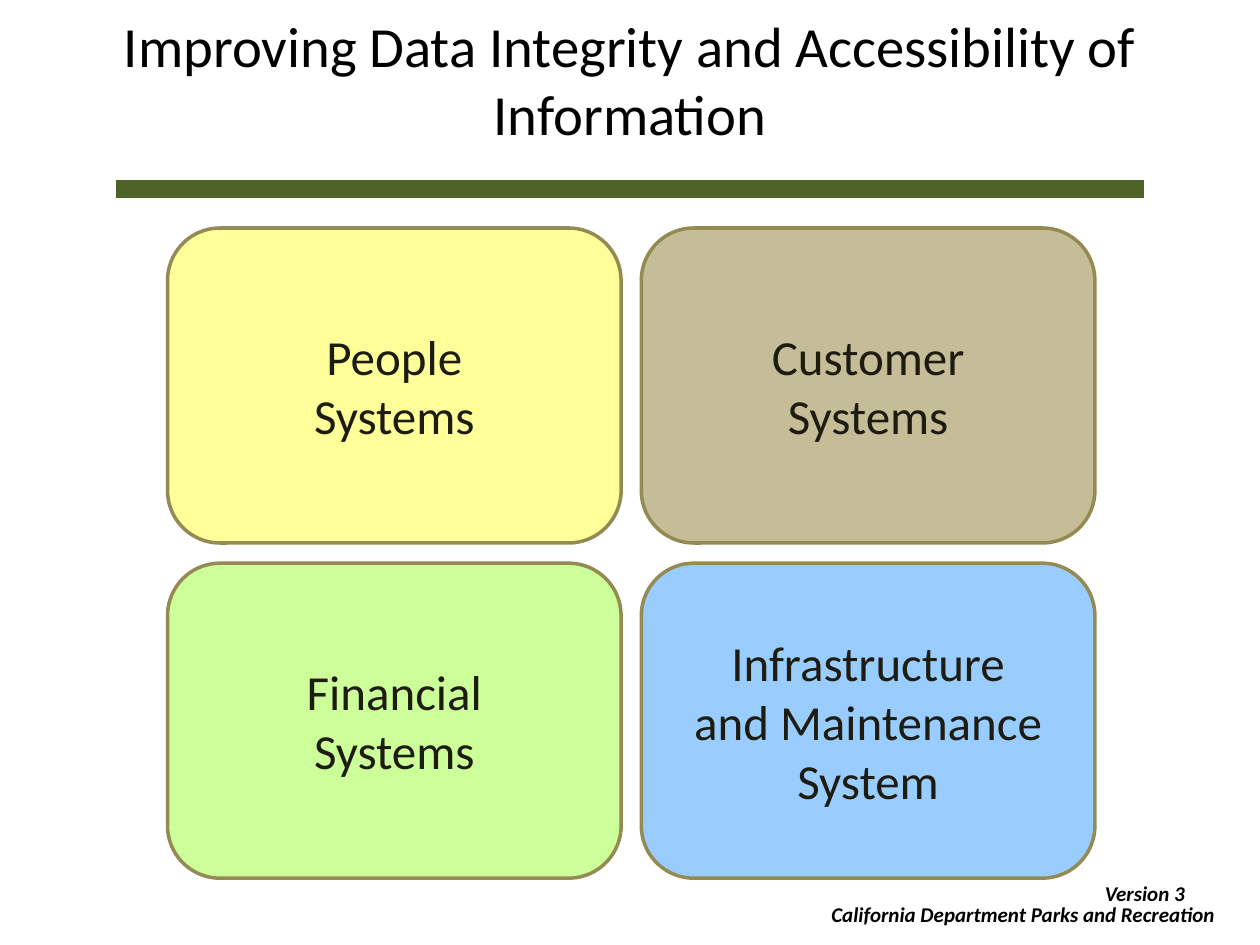
from dataclasses import dataclass

from lxml.etree import SubElement
from pptx import Presentation
from pptx.dml.color import RGBColor
from pptx.enum.shapes import MSO_CONNECTOR, MSO_SHAPE
from pptx.enum.text import MSO_ANCHOR, MSO_AUTO_SIZE, PP_ALIGN
from pptx.oxml.ns import qn
from pptx.util import Inches, Pt


@dataclass(frozen=True)
class Theme:
    """Colours, font and type sizes of the slide."""
    font: str = "Calibri"
    black: str = "000000"
    label: str = "1E1C11"
    rule: str = "4F6228"
    border: str = "948A54"
    title_size: float = 32.4
    label_size: float = 28
    footer_size: float = 12


@dataclass(frozen=True)
class Grid:
    """Grid of system boxes, in inches."""
    left: float = 1.33
    top: float = 1.81
    width: float = 3.6
    height: float = 2.5
    gap: float = 0.16

    def cell(self, col, row):
        """Return left, top, width and height of one cell."""
        x = self.left + col * (self.width + self.gap)
        y = self.top + row * (self.height + self.gap)
        return [Inches(v) for v in (x, y, self.width, self.height)]


THEME = Theme()
GRID = Grid()
SYSTEMS = [
    (0, 0, "FFFF99", ["People", "Systems"]),
    (0, 1, "CCFF99", ["Financial", "Systems"]),
    (1, 1, "99CCFF", ["Infrastructure", "and Maintenance System"]),
    (1, 0, "C4BD97", ["Customer", "Systems"]),
]
FOOTERS = [
    (6.5, 7.11, 3.27, "California Department Parks and Recreation"),
    (8.67, 6.94, 0.85, "Version 3"),
]


def write(tf, lines, size, color, align=PP_ALIGN.CENTER, **extra):
    """Fill a text frame with one paragraph per line."""
    style = {"name": THEME.font, "size": Pt(size), **extra}
    for i, line in enumerate(lines):
        p = tf.add_paragraph() if i else tf.paragraphs[0]
        p.alignment = align
        r = p.add_run()
        r.text = line
        for key, value in style.items():
            setattr(r.font, key, value)
        r.font.color.rgb = RGBColor.from_string(color)


def add_title(s, text):
    """Place and fill the title placeholder."""
    sp = s.shapes.title
    box = {"left": 0.5, "top": 0, "width": 9, "height": 1.25}
    for key, value in box.items():
        setattr(sp, key, Inches(value))
    tf = sp.text_frame
    tf.word_wrap = True
    tf.auto_size = MSO_AUTO_SIZE.NONE
    tf.vertical_anchor = MSO_ANCHOR.MIDDLE
    write(tf, [text], THEME.title_size, THEME.black)


def add_rule(s, x1, x2, y):
    """Draw the thick horizontal rule under the title."""
    ends = [Inches(v) for v in (x1, y, x2, y)]
    cxn = s.shapes.add_connector(MSO_CONNECTOR.STRAIGHT, *ends)
    cxn.line.color.rgb = RGBColor.from_string(THEME.rule)
    cxn.line.width = Pt(10)
    SubElement(cxn._element.spPr, qn("a:effectLst"))


def add_footer(s, x, y, width, text):
    """Add one unwrapped footer line."""
    box = [Inches(v) for v in (x, y, width, 0.3)]
    tf = s.shapes.add_textbox(*box).text_frame
    tf.word_wrap = False
    tf.auto_size = MSO_AUTO_SIZE.SHAPE_TO_FIT_TEXT
    write(tf, [text], THEME.footer_size, THEME.black, PP_ALIGN.LEFT,
          bold=True, italic=True)


def add_system(s, col, row, fill, lines):
    """Add one rounded system box to the grid."""
    sp = s.shapes.add_shape(MSO_SHAPE.ROUNDED_RECTANGLE, *GRID.cell(col, row))
    sp.shadow.inherit = False
    sp.fill.solid()
    sp.fill.fore_color.rgb = RGBColor.from_string(fill)
    sp.line.color.rgb = RGBColor.from_string(THEME.border)
    sp.line.width = Pt(2)
    tf = sp.text_frame
    tf.word_wrap = True
    tf.vertical_anchor = MSO_ANCHOR.MIDDLE
    write(tf, lines, THEME.label_size, THEME.label)


def main():
    """Build the slide and save it."""
    prs = Presentation()
    prs.slide_width, prs.slide_height = Inches(10), Inches(7.5)
    s = prs.slides.add_slide(prs.slide_layouts[5])
    add_rule(s, 0.92, 9.08, 1.5)
    for footer in FOOTERS:
        add_footer(s, *footer)
    add_title(s, "Improving Data Integrity and Accessibility of Information")
    for system in SYSTEMS:
        add_system(s, *system)
    prs.save("out.pptx")


if __name__ == "__main__":
    main()
